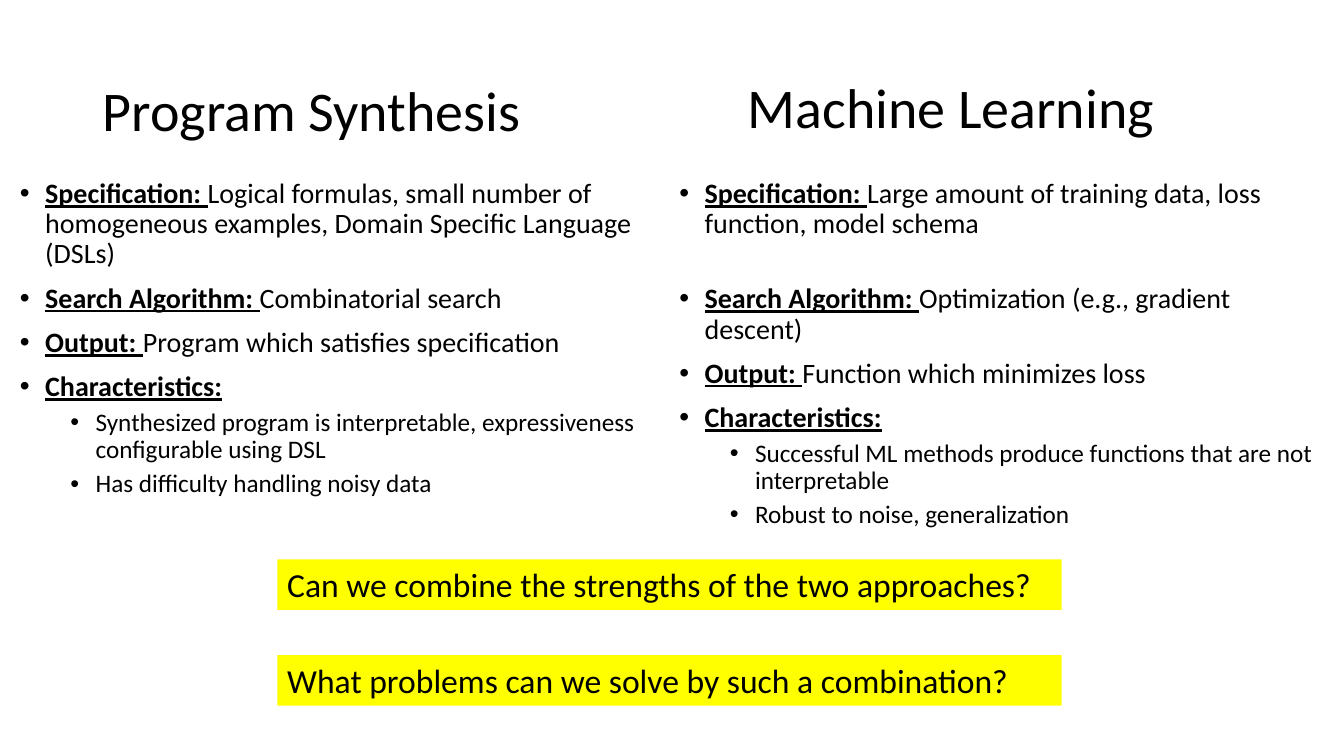
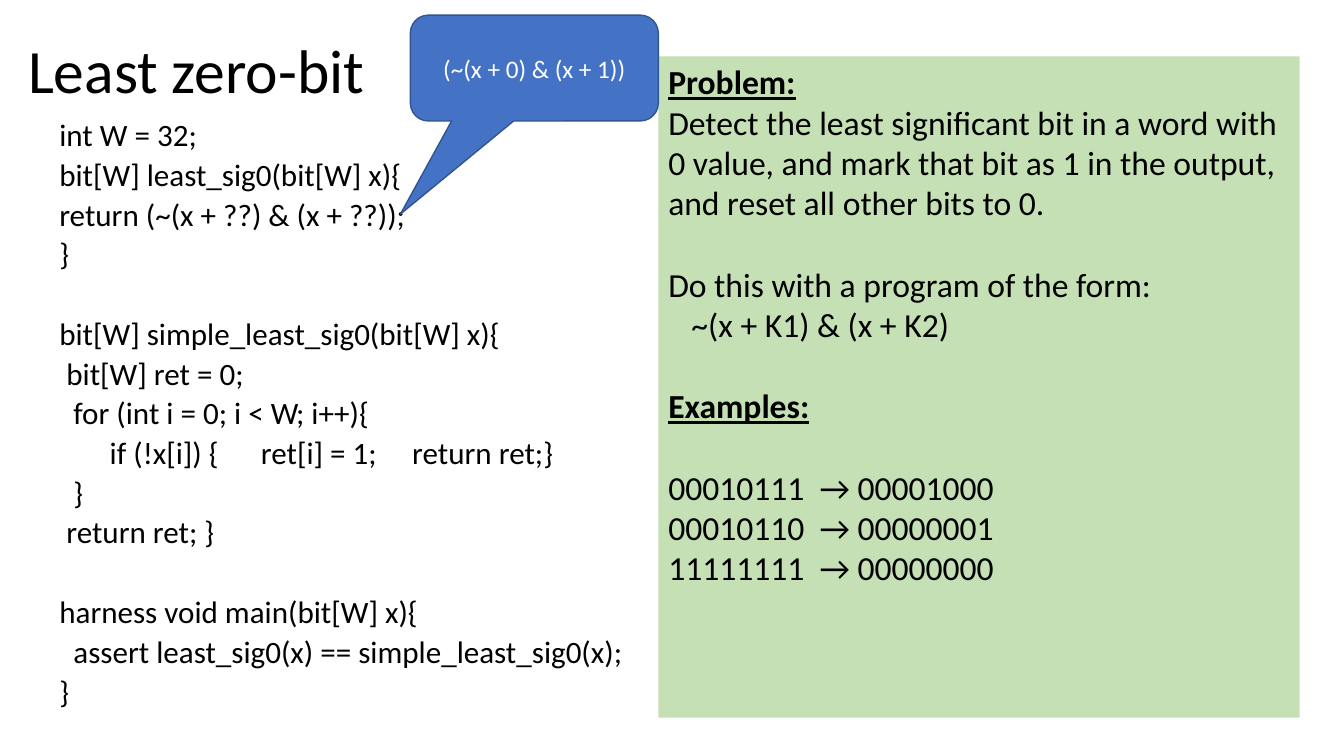
from lxml import etree
from pptx import Presentation
from pptx.dml.color import RGBColor
from pptx.enum.shapes import MSO_SHAPE
from pptx.enum.text import MSO_ANCHOR, PP_ALIGN
from pptx.oxml.ns import qn
from pptx.util import Inches, Pt

RECTANGLE = MSO_SHAPE.RECTANGLE
CALLOUT = MSO_SHAPE.ROUNDED_RECTANGULAR_CALLOUT
TOP, MIDDLE = MSO_ANCHOR.TOP, MSO_ANCHOR.MIDDLE
LEFT, CENTER = PP_ALIGN.LEFT, PP_ALIGN.CENTER

FONT = "Calibri"
BLACK = RGBColor(0x00, 0x00, 0x00)
WHITE = RGBColor(0xFF, 0xFF, 0xFF)
YELLOW = RGBColor(0xFF, 0xFF, 0x00)
GREEN = RGBColor(0xC5, 0xE0, 0xB4)
BLUE = RGBColor(0x44, 0x72, 0xC4)
DARK_BLUE = RGBColor(0x32, 0x54, 0x91)

COLUMN_WIDTH = 6.6
PANEL_GAP = 29.3
CODE_SIZE = 22.2
CODE_SPACE = 9.7
CODE_GAP = 38.3
CODE_INDENT = 0.07
CODE_TABS = [0.98 + 1.36 * step for step in range(3)]

# Each topic: heading, text, space before in points
SYNTHESIS_TOPICS = [
    ("Specification: ", "Logical formulas, small number of homogeneous examples, "
     "Domain Specific Language (DSLs)", 10),
    ("Search Algorithm: ", "Combinatorial search", 10),
    ("Output: ", "Program which satisfies specification", 10),
    ("Characteristics:", "", 10),
]
SYNTHESIS_TRAITS = [
    "Synthesized program is interpretable, expressiveness configurable using DSL",
    "Has difficulty handling noisy data",
]
LEARNING_TOPICS = [
    ("Specification: ", "Large amount of training data, loss function, model schema", 10),
    ("Search Algorithm: ", "Optimization (e.g., gradient descent)", 32),
    ("Output: ", "Function which minimizes loss", 10),
    ("Characteristics:", "", 10),
]
LEARNING_TRAITS = [
    "Successful ML methods produce functions that are not interpretable",
    "Robust to noise, generalization",
]
QUESTIONS = [
    "Can we combine the strengths of the two approaches?",
    "What problems can we solve by such a combination?",
]
# Blocks of code; each line: indent in steps, text
CODE_BLOCKS = [
    [(0, "int W = 32;"),
     (0, "bit[W] least_sig0(bit[W] x){"),
     (0, "return (~(x + ??) & (x + ??));"),
     (0, "}")],
    [(0, "bit[W] simple_least_sig0(bit[W] x){"),
     (1, "bit[W] ret = 0;"),
     (2, "for (int i = 0; i < W; i++){"),
     (0, "\tif (!x[i]) {\tret[i] = 1;\treturn ret;}"),
     (2, "}"),
     (1, "return ret; }")],
    [(0, "harness void main(bit[W] x){"),
     (2, "assert least_sig0(x) == simple_least_sig0(x);"),
     (0, "}")],
]
EXAMPLES = [("00010111", "00001000"), ("00010110", "00000001"), ("11111111", "00000000")]


def add_paragraph(frame, text, heading="", size=24, color=BLACK, align=LEFT,
                  line_spacing=1.0, space_before=0, indent=0, level=0,
                  bullet=False, tabs=()):
    """Write text after an optional bold, underlined heading."""
    paragraph = frame.paragraphs[0]
    if paragraph.runs:
        paragraph = frame.add_paragraph()
    paragraph.alignment = align
    paragraph.level = level
    paragraph.line_spacing = line_spacing
    paragraph.space_before = Pt(space_before)
    for content, is_heading in ((heading, True), (text, False)):
        if content:
            run = paragraph.add_run()
            run.text = content
            run.font.name = FONT
            run.font.size = Pt(size)
            run.font.color.rgb = color
            run.font.bold = is_heading
            run.font.underline = is_heading
    properties = paragraph._p.get_or_add_pPr()
    properties.set("marL", str(Inches(indent)))
    properties.set("indent", str(Inches(-0.25 if bullet else 0)))
    if bullet:
        etree.SubElement(properties, qn("a:buFont"), typeface="Arial")
        etree.SubElement(properties, qn("a:buChar"), char="•")
    if tabs:
        tab_list = etree.SubElement(properties, qn("a:tabLst"))
        for position in tabs:
            etree.SubElement(tab_list, qn("a:tab"), pos=str(Inches(position)), algn="l")


def add_text_box(slide, left, top, width, height, anchor=TOP):
    box = slide.shapes.add_textbox(Inches(left), Inches(top), Inches(width), Inches(height))
    frame = box.text_frame
    frame.word_wrap = True
    frame.vertical_anchor = anchor
    return frame


def add_filled_shape(slide, kind, left, top, width, height, fill, line=None, anchor=TOP):
    shape = slide.shapes.add_shape(
        kind, Inches(left), Inches(top), Inches(width), Inches(height))
    shape.shadow.inherit = False
    shape.fill.solid()
    shape.fill.fore_color.rgb = fill
    if line is None:
        shape.line.fill.background()
    else:
        shape.line.color.rgb = line
        shape.line.width = Pt(1)
    shape.text_frame.word_wrap = True
    shape.text_frame.vertical_anchor = anchor
    return shape


def add_title(slide, text, left, top, width, size):
    frame = add_text_box(slide, left, top, width, 1.45, MIDDLE)
    add_paragraph(frame, text, size=size, line_spacing=0.9)


def add_topic_list(slide, left, topics, traits):
    frame = add_text_box(slide, left, 1.73, COLUMN_WIDTH, 5.3)
    for heading, text, space_before in topics:
        add_paragraph(frame, text, heading=heading, size=20, line_spacing=0.9,
                      space_before=space_before, indent=0.25, bullet=True)
    for trait in traits:
        add_paragraph(frame, trait, size=18, line_spacing=0.9, space_before=5,
                      indent=0.75, level=1, bullet=True)


def add_code(slide):
    frame = add_text_box(slide, 0.49, 1.2, 6.36, 6.03)
    for block_index, block in enumerate(CODE_BLOCKS):
        for line_index, (steps, text) in enumerate(block):
            starts_block = block_index > 0 and line_index == 0
            add_paragraph(frame, text, size=CODE_SIZE, line_spacing=0.7,
                          space_before=CODE_GAP if starts_block else CODE_SPACE,
                          indent=steps * CODE_INDENT,
                          tabs=CODE_TABS if "\t" in text else ())


def add_problem_panel(slide):
    panel = add_filled_shape(slide, RECTANGLE, 6.53, 0.56, 6.36, 6.56, GREEN)
    frame = panel.text_frame
    add_paragraph(frame, "", heading="Problem:")
    add_paragraph(frame, "Detect the least significant bit in a word with 0 value, and mark "
                         "that bit as 1 in the output, and reset all other bits to 0.")
    add_paragraph(frame, "Do this with a program of the form:", space_before=PANEL_GAP)
    add_paragraph(frame, "~(x + K1) & (x + K2)", indent=0.23)
    add_paragraph(frame, "", heading="Examples:", space_before=PANEL_GAP)
    for index, (word, result) in enumerate(EXAMPLES):
        add_paragraph(frame, f"{word}\t→ {result}", tabs=[1.51],
                      space_before=0 if index else PANEL_GAP)


def add_solution_callout(slide):
    callout = add_filled_shape(slide, CALLOUT, 4.07, 0.15, 2.46, 1.05,
                               BLUE, line=DARK_BLUE, anchor=MIDDLE)
    for index, value in enumerate((-0.54, 1.38, 0.17)):
        callout.adjustments[index] = value
    add_paragraph(callout.text_frame, "(~(x + 0) & (x + 1))",
                  size=18, color=WHITE, align=CENTER)


def build_comparison_slide(slide):
    add_title(slide, "Program Synthesis", 0.92, 0.4, 5.28, 40)
    add_topic_list(slide, 0.1, SYNTHESIS_TOPICS, SYNTHESIS_TRAITS)
    add_title(slide, "Machine Learning", 7.32, 0.37, 5.28, 40)
    add_topic_list(slide, 6.64, LEARNING_TOPICS, LEARNING_TRAITS)
    for index, question in enumerate(QUESTIONS):
        box = add_filled_shape(slide, RECTANGLE, 2.75, 5.55 + 0.95 * index, 7.78, 0.5, YELLOW)
        add_paragraph(box.text_frame, question)


def build_example_slide(slide):
    add_title(slide, "Least zero-bit", 0.18, 0, 11.5, 44)
    add_code(slide)
    add_problem_panel(slide)
    add_solution_callout(slide)


def main():
    presentation = Presentation()
    presentation.slide_width = Inches(13.33)
    presentation.slide_height = Inches(7.5)
    blank_layout = presentation.slide_layouts[6]
    for build_slide in (build_comparison_slide, build_example_slide):
        build_slide(presentation.slides.add_slide(blank_layout))
    presentation.save("out.pptx")


if __name__ == "__main__":
    main()
